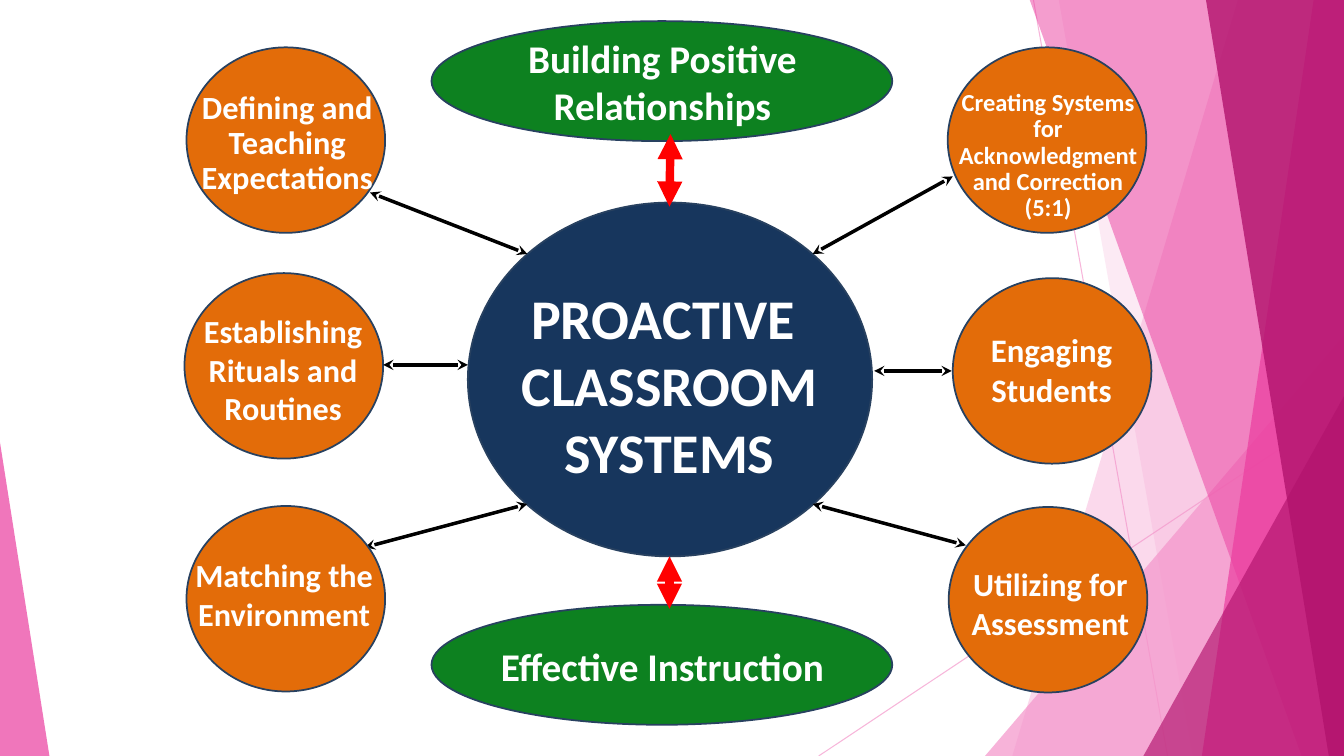
import pptx
import pptx.util
import pptx.dml.color
import pptx.enum.shapes
import pptx.enum.text
import pptx.oxml
import pptx.oxml.ns

PX = 9144  # EMU in one px, 100 px to the inch
WIDE, HIGH = 1333, 750
COLORS = {
    "white": "FFFFFF", "black": "000000", "red": "FF0000",
    "orange": "E36C09", "green": "0D8120", "navy": "17365D",
    "edge": "284160", "pale": "F496CB", "pink": "EB3D9F", "plum": "B2136D",
}
SHAPE = pptx.enum.shapes.MSO_SHAPE
ANCHOR = pptx.enum.text.MSO_ANCHOR
NODE = (197, 184)
OVAL = (457, 119)

# Slanted bands: top left x, bottom left x, colour, opacity
BANDS = [
    (1228, 1004, "pale", 36), (1050, 1183, "pale", 20),
    (1021, 1291, "pink", 50), (1303, 1192, "pink", 70),
    (1196, 1318, "plum", 80),
]

# Circles: corner, text box, size, line spacing, lines of text
BACK = [
    ((185, 47), (185, 81, 200, 124), 23.1, 0.9,
     ["Defining and Teaching Expectations"]),
    ((183, 271), (181, 300, 200, 133), 23, 1,
     ["Establishing Rituals and Routines"]),
    ((941, 503), (942, 528, 200, 141), 23, 1, ["Utilizing for Assessment"]),
]
FRONT = [
    ((940, 47), (930, 80, 219, 150), 17.5, 0.9,
     ["Creating Systems for Acknowledgment and Correction", "(5:1)"]),
    ((945, 276), (943, 300, 200, 133), 23.4, 1, ["Engaging Students"]),
    ((185, 502), (182, 531, 200, 117), 23, 1, ["Matching the Environment"]),
]
OVALS = [
    ((428, 21), (445, 32, 424, 97), 28, 1, ["Building Positive Relationships"]),
    ((428, 600), (445, 612, 424, 97), 28, 1, ["Effective Instruction"]),
]

# Arrows: start x, y, end x, y
SPOKES = [
    (523, 252, 367, 191), (464, 362, 380, 362), (523, 500, 362, 543),
    (867, 368, 944, 368), (806, 252, 945, 175), (806, 500, 958, 541),
]
BOLD = [(665, 133, 664, 205), (664, 552, 664, 604)]


def emu(*vals):
    return [pptx.util.Emu(val * PX) for val in vals]


def rgb(name):
    return pptx.dml.color.RGBColor.from_string(COLORS[name])


def put(thing, **vals):
    for key, val in vals.items():
        setattr(thing, key, val)


def add_tag(parent, tag, **attrs):
    item = pptx.oxml.parse_xml(f"<a:{tag} {pptx.oxml.ns.nsdecls('a')}/>")
    for key, val in attrs.items():
        item.set(key, str(val))
    parent.append(item)


def fade(shape, alpha):
    for tint in shape._element.spPr.iter(pptx.oxml.ns.qn("a:srgbClr")):
        add_tag(tint, "alpha", val=alpha * 1000)


def paint(shape, fill, edge=None, alpha=100):
    shape.shadow.inherit = False
    shape.fill.solid()
    shape.fill.fore_color.rgb = rgb(fill)
    if edge:
        shape.line.color.rgb = rgb(edge)
        shape.line.width = pptx.util.Pt(1.25)
    else:
        shape.line.fill.background()
    if alpha < 100:
        fade(shape, alpha)


def add_line(slide, ends, color, width, head=None, alpha=100):
    kind = pptx.enum.shapes.MSO_CONNECTOR.STRAIGHT
    line = slide.shapes.add_connector(kind, *emu(*ends))
    line.line.color.rgb = rgb(color)
    line.line.width = pptx.util.Pt(width)
    if alpha < 100:
        fade(line, alpha)
    if head:
        for tag in ("headEnd", "tailEnd"):
            add_tag(line.line._get_or_add_ln(), tag, type=head)
    add_tag(line._element.spPr, "effectLst")


def add_band(slide, top, base, color, alpha):
    form = slide.shapes.build_freeform(top, -1, scale=PX)
    form.add_line_segments([(WIDE, -1), (WIDE, HIGH), (base, HIGH)], close=True)
    paint(form.convert_to_shape(), color, alpha=alpha)


def add_wedge(slide, box, tip, color, alpha):
    wedge = slide.shapes.add_shape(SHAPE.ISOSCELES_TRIANGLE, *emu(*box))
    wedge.adjustments[0] = tip
    paint(wedge, color, alpha=alpha)


def add_disc(slide, box, color):
    disc = slide.shapes.add_shape(SHAPE.OVAL, *emu(*box))
    paint(disc, color, "edge")


def write(frame, lines, size, pitch, anchor):
    left, top = emu(10, 5)
    put(frame, word_wrap=True, vertical_anchor=anchor,
        auto_size=pptx.enum.text.MSO_AUTO_SIZE.NONE,
        margin_left=left, margin_right=left, margin_top=top, margin_bottom=top)
    for num, text in enumerate(lines):
        para = frame.add_paragraph() if num else frame.paragraphs[0]
        para.text = text
        put(para, alignment=pptx.enum.text.PP_ALIGN.CENTER, line_spacing=pitch,
            space_before=pptx.util.Pt(0))
        for run in para.runs:
            put(run.font, name="Calibri", size=pptx.util.Pt(size), bold=True)
            run.font.color.rgb = rgb("white")


def add_node(slide, node, size, color):
    spot, area, points, pitch, lines = node
    add_disc(slide, spot + size, color)
    box = slide.shapes.add_textbox(*emu(*area))
    write(box.text_frame, lines, points, pitch, ANCHOR.MIDDLE)


def add_title(slide):
    title = slide.shapes.title
    left, top, width, height = emu(489, 276, 350, 203)
    put(title, left=left, top=top, width=width, height=height)
    write(title.text_frame, ["PROACTIVE \vCLASSROOM\vSYSTEMS"], 40, 1, ANCHOR.TOP)
    slide.shapes._spTree.append(title._element)  # in front of the hub


def add_decor(slide):
    for ends in [(1025, 0, 1158, HIGH), (WIDE, 403, 812, HIGH)]:
        add_line(slide, ends, "pale", 0.75, alpha=70)
    for band in BANDS[:2]:
        add_band(slide, *band)
    add_wedge(slide, (977, 333, 356, 417), 1, "pale", 72)
    for band in BANDS[2:]:
        add_band(slide, *band)
    add_wedge(slide, (1134, 393, 199, 357), 1, "plum", 66)
    add_wedge(slide, (0, 439, 49, 311), 0, "pink", 70)


def main():
    deck = pptx.Presentation()
    width, height = emu(WIDE, HIGH)
    put(deck, slide_width=width, slide_height=height)
    slide = deck.slides.add_slide(deck.slide_layouts[5])
    add_decor(slide)

    # Hub and the circles behind the arrows
    for node in BACK:
        add_node(slide, node, NODE, "orange")
    add_disc(slide, (464, 201, 401, 351), "navy")
    add_title(slide)

    # Arrows, then the circles that cover their tips
    for ends in SPOKES:
        add_line(slide, ends, "black", 2.5, "stealth")
    for node in FRONT:
        add_node(slide, node, NODE, "orange")

    # Green ovals and red arrows
    for node in OVALS:
        add_node(slide, node, OVAL, "green")
    for ends in BOLD:
        add_line(slide, ends, "red", 6, "triangle")

    deck.save("out.pptx")


if __name__ == "__main__":
    main()
